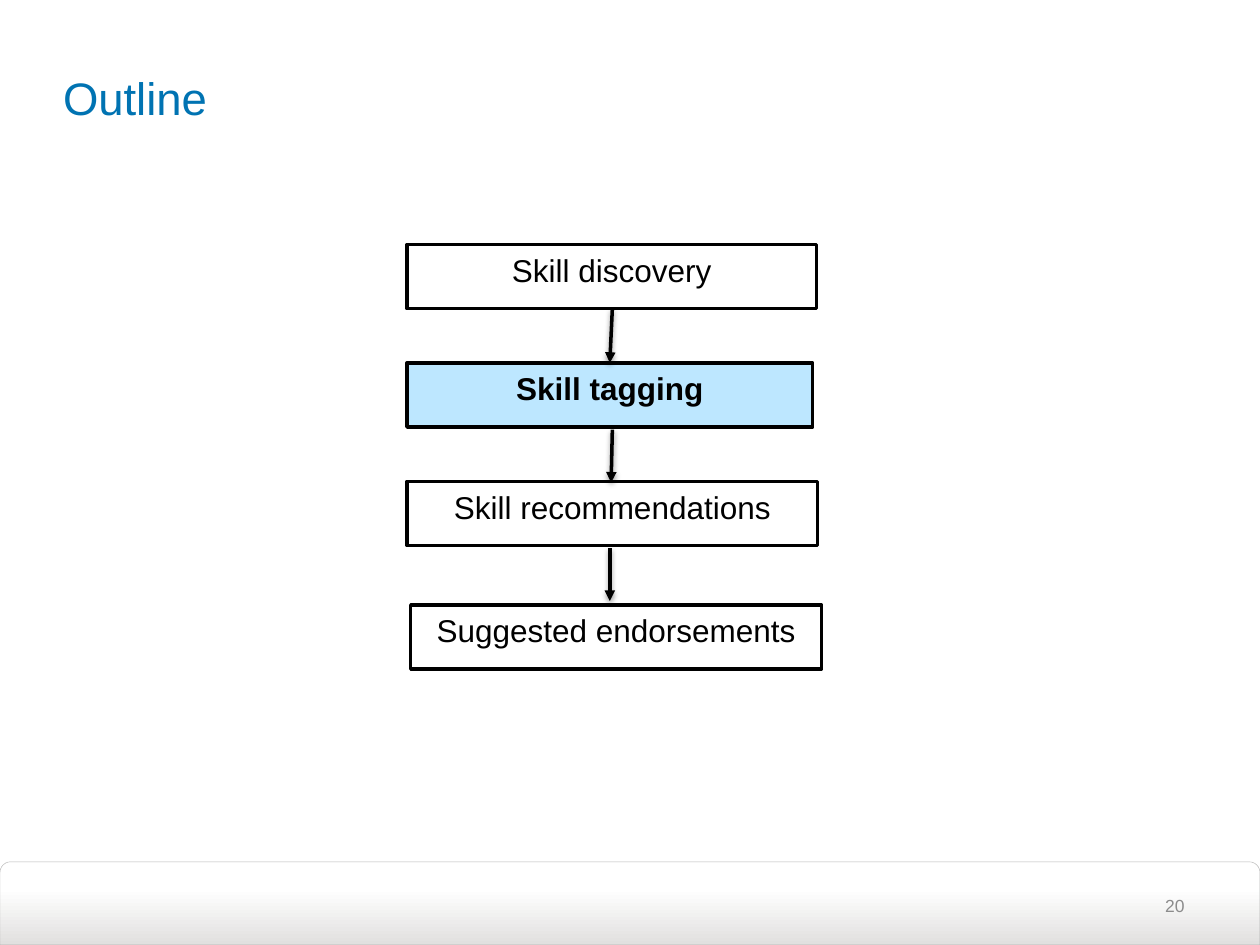
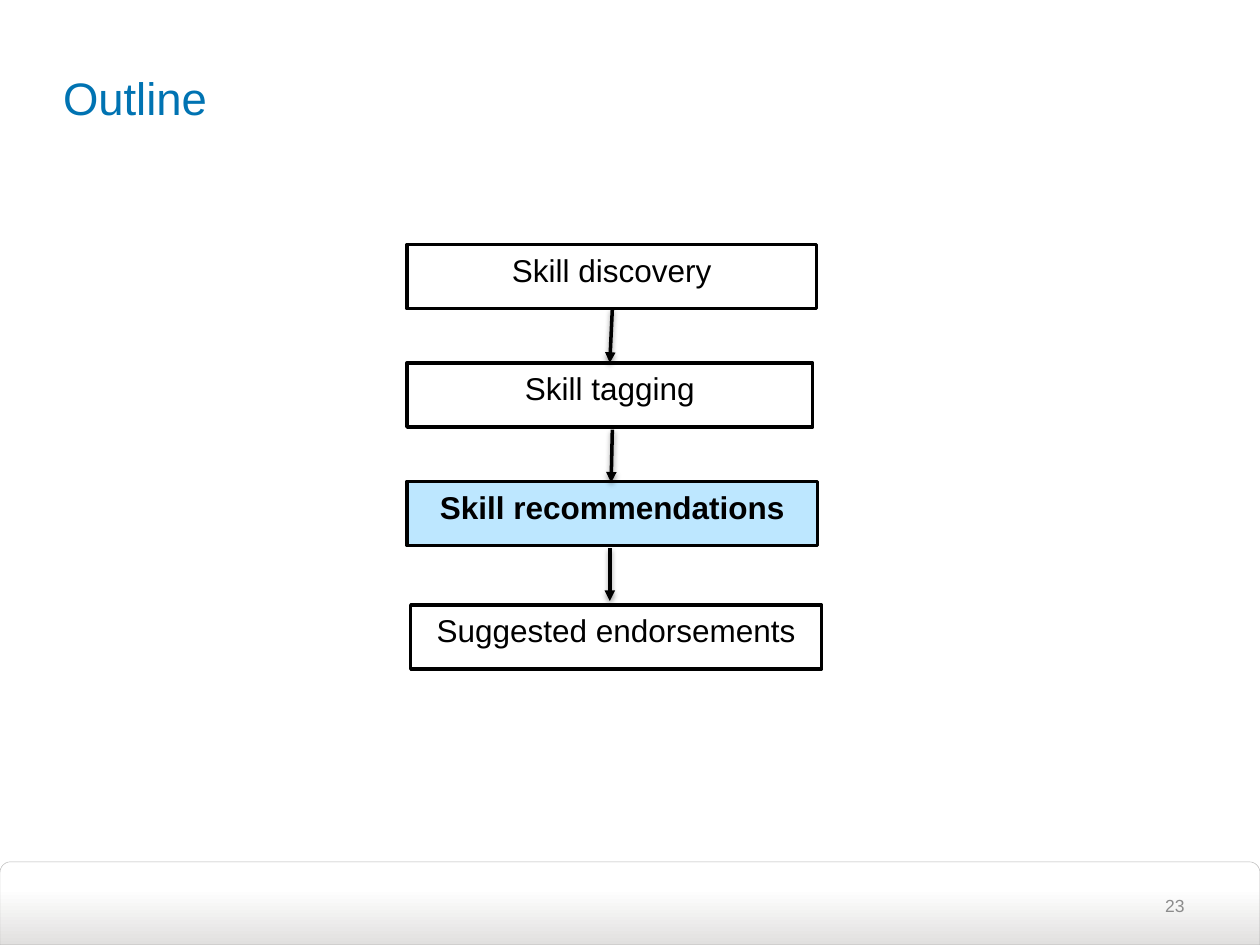
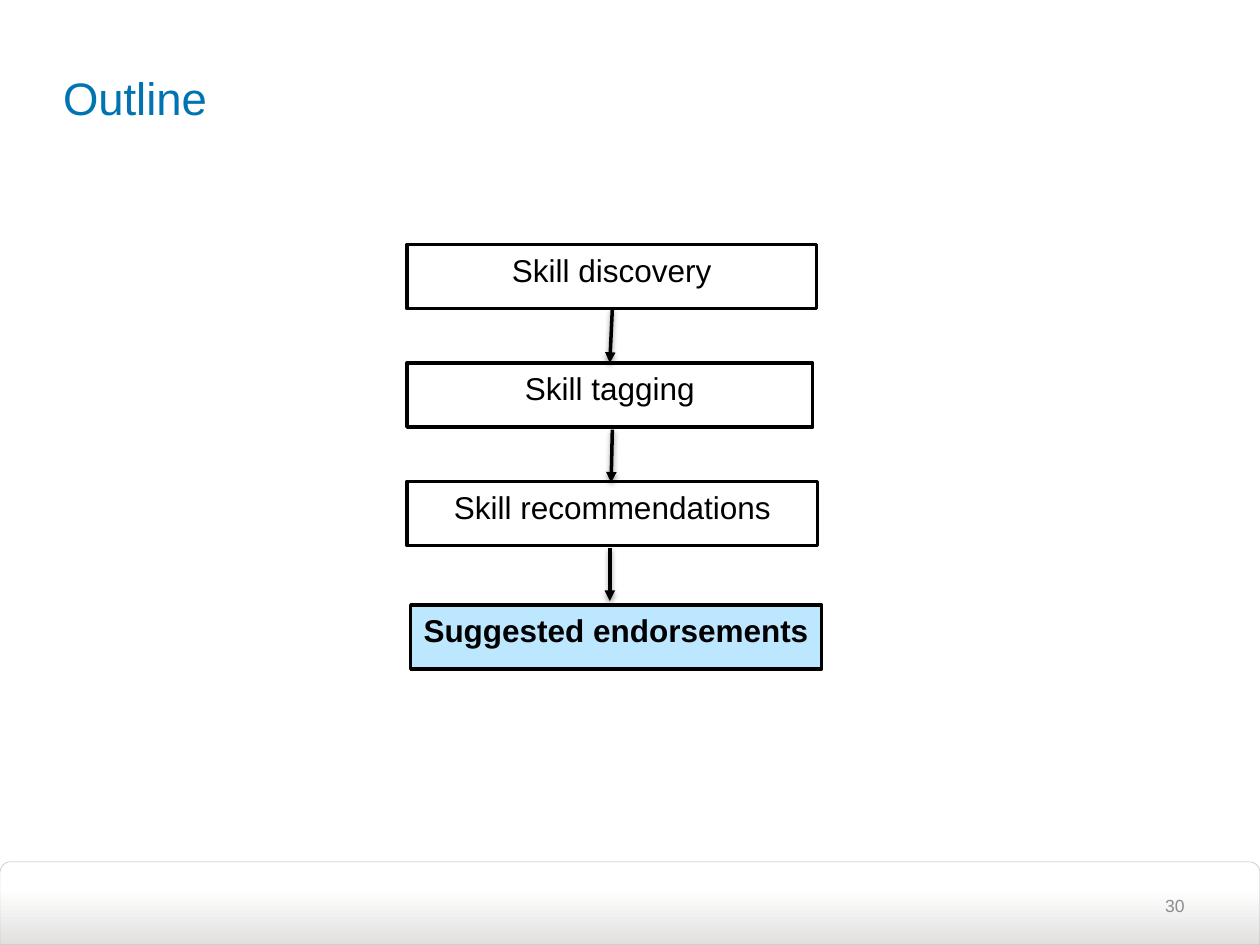
from dataclasses import dataclass

import pptx
import pptx.dml.color
import pptx.enum.shapes
import pptx.enum.text
import pptx.oxml
import pptx.oxml.ns
import pptx.util
from lxml import etree

ALIGN = pptx.enum.text.PP_ALIGN
ANCHOR = pptx.enum.text.MSO_ANCHOR
SHAPE = pptx.enum.shapes.MSO_SHAPE


def rgb(value):
    return pptx.dml.color.RGBColor.from_string(value)


# Shared look
@dataclass(frozen=True)
class Theme:
    font: str = "Arial"
    title: str = "0073B2"
    ink: str = "000000"
    paper: str = "FFFFFF"
    highlight: str = "BDE7FF"
    band: str = "E1E0DF"
    band_edge: str = "A6A6A6"
    number: str = "8C8C8C"
    title_size: int = 26
    step_size: int = 18
    number_size: int = 10
    stroke: int = 2
    hairline: float = 0.25


THEME = Theme()

# Grid: 100 columns by 75 rows on a 10 by 7.5 inch slide
COLUMNS, ROWS = 100, 75
SLIDE_WIDTH, SLIDE_HEIGHT = pptx.util.Inches(10), pptx.util.Inches(7.5)


@dataclass(frozen=True)
class Box:
    column: float
    row: float
    columns: float
    rows: float

    def inside(self, column, row, columns, rows):
        return Box(self.column + column, self.row + row, columns, rows)

    def point(self, column, row):
        return (round((self.column + column) * SLIDE_WIDTH / COLUMNS),
                round((self.row + row) * SLIDE_HEIGHT / ROWS))

    def emu(self):
        return self.point(0, 0) + (round(self.columns * SLIDE_WIDTH / COLUMNS),
                                   round(self.rows * SLIDE_HEIGHT / ROWS))


TITLE_BOX = Box(5, 2.2, 90, 11)
BAND_BOX = Box(0, 68.4, COLUMNS, 6.6)
FLOW_BOX = Box(32.3, 19.4, 32.9, 33.7)

# Steps: label, column, row and width within the flow
STEP_ROWS = 5.1
STEPS = [
    ("Skill discovery", 0, 0, 32.5),
    ("Skill tagging", 0, 9.4, 32.2),
    ("Skill recommendations", 0, 18.8, 32.6),
    ("Suggested endorsements", 0.3, 28.6, 32.6),
]
# Arrows: start and end within the flow
ARROWS = [
    ((16.3, 5.1), (16.1, 9.4)),
    ((16.3, 14.7), (16.2, 18.9)),
    ((16.1, 24.1), (16.1, 28.3)),
]
OUTLINES = [("20", "Skill tagging"),
            ("23", "Skill recommendations"),
            ("30", "Suggested endorsements")]


def set_all(target, values):
    for name, value in values.items():
        setattr(target, name, value)


def write(shape, text, size, color, align, anchor, bold=False, **frame_format):
    frame = shape.text_frame
    frame.text = text
    set_all(frame, {"word_wrap": True, "vertical_anchor": anchor,
                    "auto_size": pptx.enum.text.MSO_AUTO_SIZE.NONE,
                    **frame_format})
    paragraph = frame.paragraphs[0]
    paragraph.alignment = align
    set_all(paragraph.font, {"name": THEME.font, "bold": bold,
                             "size": pptx.util.Pt(size)})
    paragraph.font.color.rgb = rgb(color)


def stroke(line, color, width):
    line.color.rgb = rgb(color)
    line.width = pptx.util.Pt(width)


# Title
def add_title(slide, box, text):
    title = slide.shapes.title
    set_all(title, dict(zip(("left", "top", "width", "height"), box.emu())))
    write(title, text, THEME.title_size, THEME.title, ALIGN.LEFT, ANCHOR.MIDDLE,
          margin_left=0, margin_right=0)


# Footer band, drawn once and kept in the layout behind its placeholders
def add_band(slide, layout, box):
    band = slide.shapes.add_shape(SHAPE.ROUND_2_SAME_RECTANGLE, *box.emu())
    band.shadow.inherit = False
    band.adjustments[0], band.adjustments[1] = 0.13, 0
    band.fill.gradient()
    band.fill.gradient_angle = 90
    fades = ((0, THEME.band), (0.68, THEME.paper))
    for stop, (position, color) in zip(band.fill.gradient_stops, fades):
        stop.position = position
        stop.color.rgb = rgb(color)
    stroke(band.line, THEME.band_edge, THEME.hairline)
    edge = band.element.spPr.find(".//a:ln//a:srgbClr", pptx.oxml.ns._nsmap)
    etree.SubElement(edge, pptx.oxml.ns.qn("a:alpha"), val="79000")
    layout.element.cSld.spTree.insert(2, band.element)


def add_page_number(slide, band, number):
    box = band.inside(71.7, 1.5, 23.3, 4)
    write(slide.shapes.add_textbox(*box.emu()), number, THEME.number_size,
          THEME.number, ALIGN.RIGHT, ANCHOR.MIDDLE)


# Flow of steps
def add_step(slide, box, label, active):
    step = slide.shapes.add_shape(SHAPE.RECTANGLE, *box.emu())
    step.shadow.inherit = False
    step.fill.solid()
    step.fill.fore_color.rgb = rgb(THEME.highlight if active else THEME.paper)
    stroke(step.line, THEME.ink, THEME.stroke)
    write(step, label, THEME.step_size, THEME.ink, ALIGN.CENTER, ANCHOR.TOP,
          bold=active)


def add_arrow(slide, start, end):
    arrow = slide.shapes.add_connector(
        pptx.enum.shapes.MSO_CONNECTOR.STRAIGHT, *start, *end)
    stroke(arrow.line, THEME.ink, THEME.stroke)
    qn = pptx.oxml.ns.qn
    properties = arrow.element.spPr
    etree.SubElement(properties.find(qn("a:ln")), qn("a:tailEnd"), type="triangle")
    effects = etree.SubElement(properties, qn("a:effectLst"))
    shadow = etree.SubElement(
        effects, qn("a:outerShdw"), blurRad=str(pptx.util.Pt(3.1)),
        dist=str(pptx.util.Pt(1.6)), dir="5400000", rotWithShape="0")
    tint = etree.SubElement(shadow, qn("a:srgbClr"), val=THEME.ink)
    etree.SubElement(tint, qn("a:alpha"), val="38000")


def add_flow(slide, box, active_label):
    for label, column, row, columns in STEPS:
        add_step(slide, box.inside(column, row, columns, STEP_ROWS), label,
                 label == active_label)
    for start, end in ARROWS:
        add_arrow(slide, box.point(*start), box.point(*end))


def add_outline(deck, layout, number, active_label):
    slide = deck.slides.add_slide(layout)
    add_title(slide, TITLE_BOX, "Outline")
    add_page_number(slide, BAND_BOX, number)
    add_flow(slide, FLOW_BOX, active_label)
    return slide


def main():
    deck = pptx.Presentation()
    deck.slide_width, deck.slide_height = SLIDE_WIDTH, SLIDE_HEIGHT
    layout = deck.slide_layouts.get_by_name("Title Only")
    slides = [add_outline(deck, layout, *outline) for outline in OUTLINES]
    add_band(slides[0], layout, BAND_BOX)
    deck.save("out.pptx")


if __name__ == "__main__":
    main()
